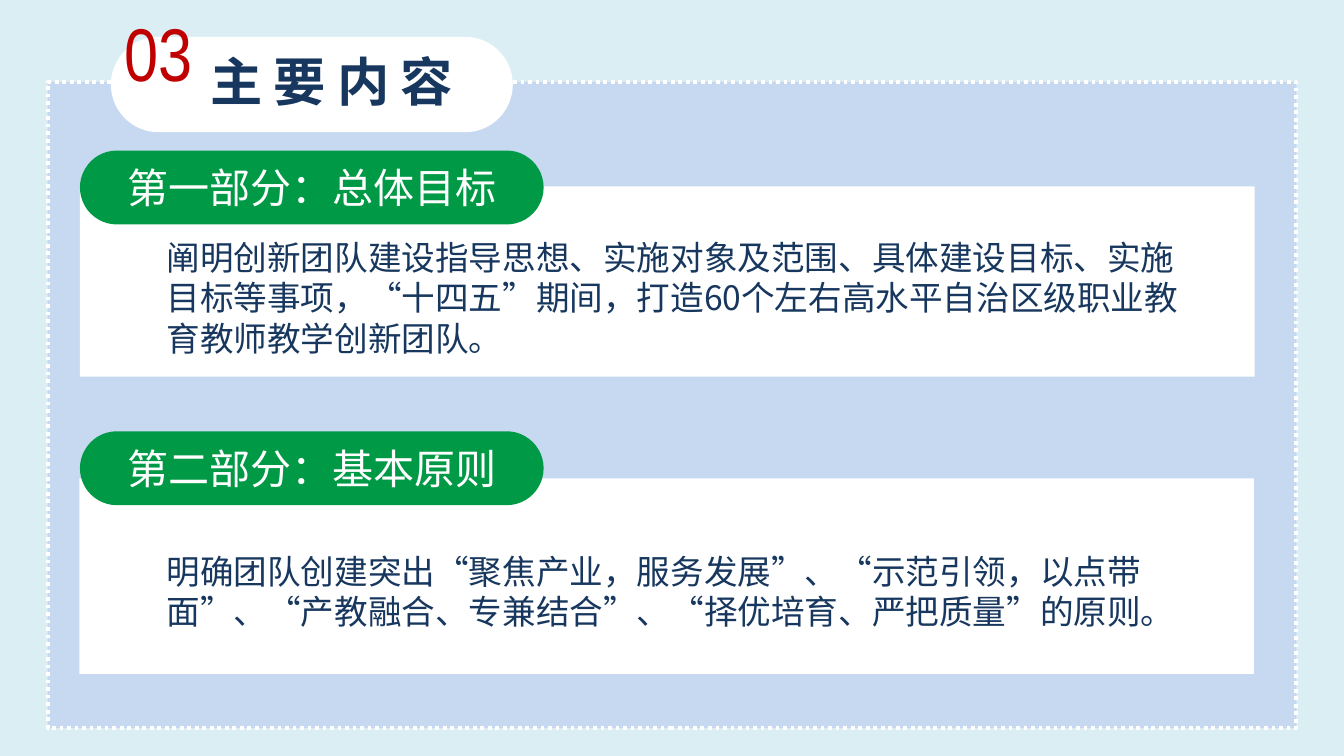
from dataclasses import dataclass
from lxml.etree import SubElement
from pptx import Presentation as Deck
from pptx.dml.color import RGBColor as Rgb
from pptx.enum.dml import MSO_LINE as Dash
from pptx.enum.shapes import MSO_SHAPE as Form
from pptx.enum.text import MSO_ANCHOR as Anchor, MSO_AUTO_SIZE as Fit, PP_ALIGN as Align
from pptx.oxml import parse_xml
from pptx.oxml.ns import nsdecls, qn
from pptx.util import Inches, Pt

WHITE = Rgb(0xFF, 0xFF, 0xFF)
SKY = Rgb(0xDB, 0xEE, 0xF4)
BLUE = Rgb(0xC6, 0xD9, 0xF1)
NAVY = Rgb(0x17, 0x37, 0x5E)
GREEN = Rgb(0x00, 0x9A, 0x46)
RED = Rgb(0xC0, 0x00, 0x00)
SANS = "Noto Sans CJK SC"
WIDE = Inches(10)
HIGH = WIDE * 9 // 16


@dataclass(frozen=True)
class Box:
    x: float
    y: float
    w: float
    h: float

    def place(self) -> tuple:
        return (round(WIDE * self.x / 100), round(HIGH * self.y / 100),
                round(WIDE * self.w / 100), round(HIGH * self.h / 100))


@dataclass(frozen=True)
class Part:
    head: str
    body: str
    tag: Box
    card: Box
    text: Box


PARTS = (
    Part("第一部分：总体目标",
         "阐明创新团队建设指导思想、实施对象及范围、具体建设目标、实施目标等事项，"
         "“十四五”期间，打造60个左右高水平自治区级职业教育教师教学创新团队。",
         Box(5.95, 19.91, 34.5, 9.78), Box(5.95, 24.65, 87.4, 25.2),
         Box(11.4, 30.45, 79.2, 17.96)),
    Part("第二部分：基本原则",
         "明确团队创建突出“聚焦产业，服务发展”、“示范引领，以点带面”、"
         "“产教融合、专兼结合”、“择优培育、严把质量”的原则。",
         Box(5.95, 57.05, 34.5, 9.78), Box(5.9, 63.29, 87.4, 25.85),
         Box(11.4, 72, 77.2, 12.62)),
)


def apply(item, form: dict) -> None:
    for key, val in form.items():
        setattr(item, key, val)


def panel(slide, box: Box, fill: Rgb, form=Form.RECTANGLE):
    shape = slide.shapes.add_shape(form, *box.place())
    shape.shadow.inherit = False
    shape.fill.solid()
    shape.fill.fore_color.rgb = fill
    shape.line.fill.background()
    if form == Form.ROUNDED_RECTANGLE:
        shape.adjustments[0] = 0.5
    return shape


def write(shape, text: str, tone: Rgb, font: dict, frame: dict, align=Align.LEFT):
    body = shape.text_frame
    apply(body, frame)
    para = body.paragraphs[0]
    para.alignment = align
    run = para.add_run()
    run.text = text
    apply(run.font, {"name": SANS, **font})
    run.font.color.rgb = tone
    props = run._r.get_or_add_rPr()
    SubElement(props, qn("a:ea")).set("typeface", run.font.name)
    return props


def label(slide, box: Box, text: str, tone: Rgb, font: dict, wrap: bool = True):
    shape = slide.shapes.add_textbox(*box.place())
    return write(shape, text, tone, font,
                 {"word_wrap": wrap, "auto_size": Fit.SHAPE_TO_FIT_TEXT})


def header(slide) -> None:
    panel(slide, Box(8.25, 4.87, 29.9, 12.62), WHITE, Form.ROUNDED_RECTANGLE)
    props = label(slide, Box(8.3, 0, 7.9, 13.69), "03", RED,
                  {"name": "Arial Narrow", "size": Pt(40)}, False)
    props.insert(0, parse_xml(
        f'<a:ln {nsdecls("a")} w="{Pt(2.25)}"><a:solidFill>'
        f'<a:srgbClr val="{WHITE}"/></a:solidFill></a:ln>'))
    title = slide.shapes.title
    spot = Box(14.65, 5.65, 21.7, 10.13).place()
    apply(title, dict(zip(("left", "top", "width", "height"), spot)))
    props = write(title, "主要内容", NAVY, {"size": Pt(28), "bold": True},
                  {"word_wrap": True, "vertical_anchor": Anchor.TOP,
                   "auto_size": Fit.SHAPE_TO_FIT_TEXT})
    props.set("spc", "600")
    title.element.getparent().append(title.element)


def section(slide, part: Part) -> None:
    panel(slide, part.card, WHITE)
    tag = panel(slide, part.tag, GREEN, Form.ROUNDED_RECTANGLE)
    write(tag, part.head, WHITE, {"size": Pt(22)},
          {"word_wrap": True, "vertical_anchor": Anchor.MIDDLE}, Align.CENTER)
    label(slide, part.text, part.body, NAVY, {"size": Pt(18)})


def main() -> None:
    deck = Deck()
    apply(deck, {"slide_width": WIDE, "slide_height": HIGH})
    slide = deck.slides.add_slide(deck.slide_layouts[5])
    back = slide.background.fill
    back.solid()
    back.fore_color.rgb = SKY
    frame = panel(slide, Box(3.55, 10.84, 92.9, 85.45), BLUE)
    frame.line.color.rgb = WHITE
    apply(frame.line, {"width": Pt(2), "dash_style": Dash.ROUND_DOT})
    header(slide)
    for part in PARTS:
        section(slide, part)
    deck.save("out.pptx")


if __name__ == "__main__":
    main()
